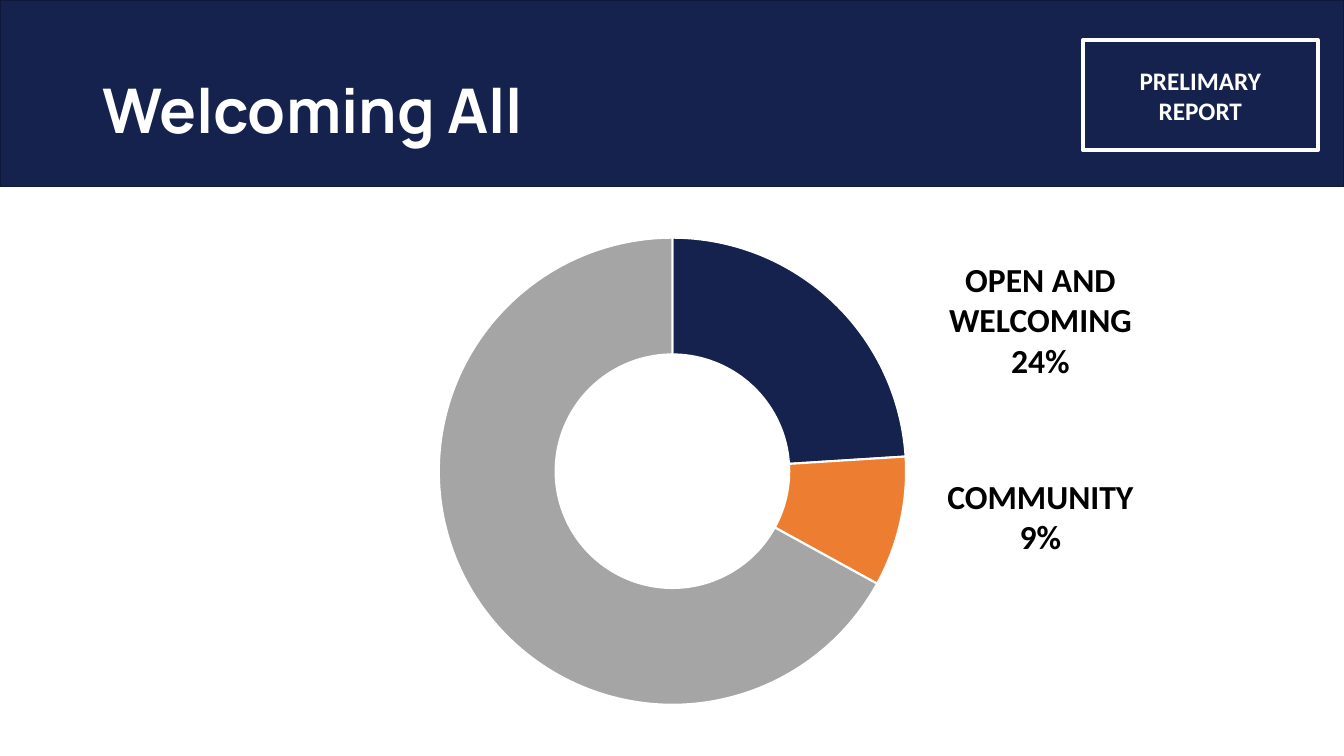
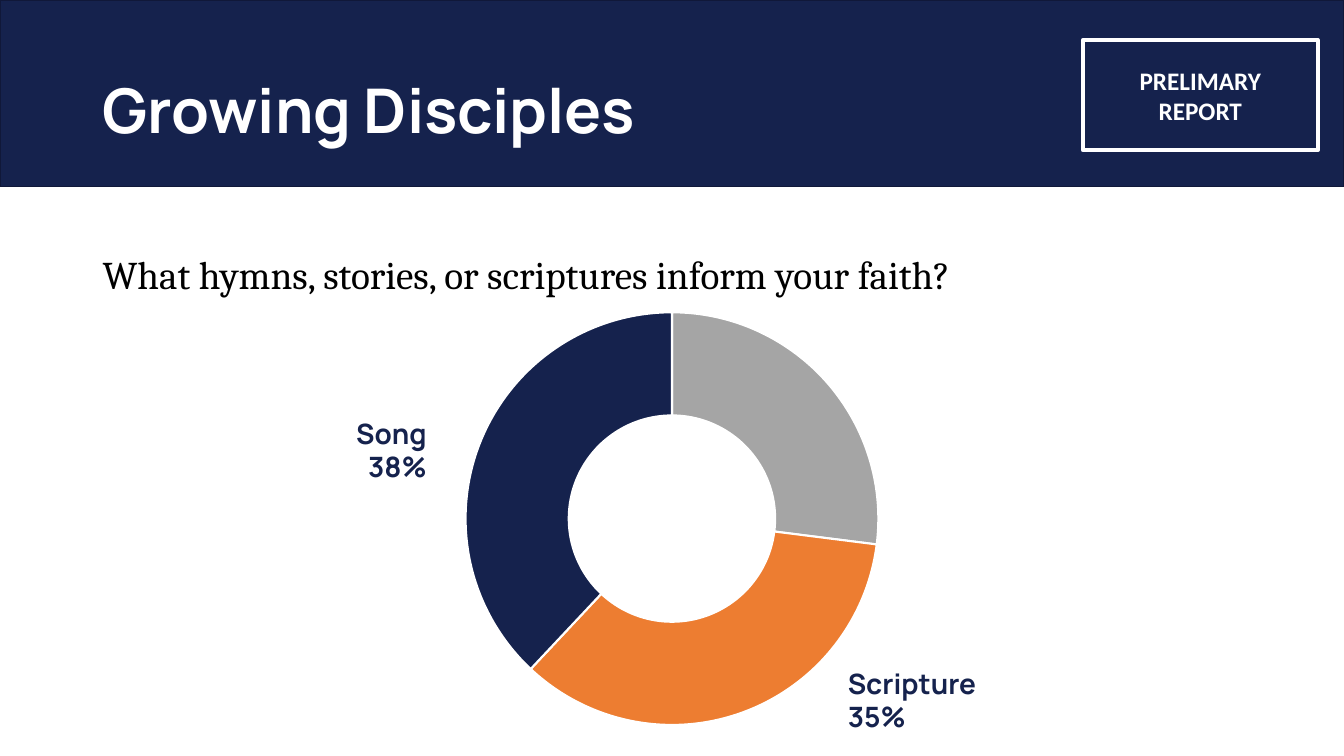
from pptx import Presentation
from pptx.chart.data import CategoryChartData
from pptx.dml.color import RGBColor
from pptx.enum.chart import XL_CHART_TYPE
from pptx.enum.shapes import MSO_SHAPE
from pptx.enum.text import MSO_ANCHOR, PP_ALIGN
from pptx.oxml.ns import qn
from pptx.util import Inches, Pt

RING = XL_CHART_TYPE.DOUGHNUT
RECT = MSO_SHAPE.RECTANGLE
TOP, MIDDLE = MSO_ANCHOR.TOP, MSO_ANCHOR.MIDDLE
LEFT, CENTER, RIGHT = PP_ALIGN.LEFT, PP_ALIGN.CENTER, PP_ALIGN.RIGHT

COLORS = {
    "navy": "15224D",
    "edge": "101839",
    "orange": "ED7D31",
    "gray": "A5A5A5",
    "white": "FFFFFF",
    "black": "000000",
}
BODY, HEAD, SERIF = "Calibri", "Manrope", "Cambria"
MARGIN = 6.9


def tint(name):
    return RGBColor.from_string(COLORS[name])


class Deck:
    """Holds the style and current slide; boxes are percent of the slide."""

    def __init__(self):
        self.prs = Presentation()
        self.prs.slide_width = Inches(13.33)
        self.prs.slide_height = Inches(7.5)
        self.slide = None

    def place(self, box):
        wide, high = self.prs.slide_width, self.prs.slide_height
        return [int(side * share / 100)
                for side, share in zip((wide, high, wide, high), box)]

    def start(self, title):
        """Add a slide with its band, badge and title."""
        self.slide = self.prs.slides.add_slide(self.prs.slide_layouts[6])
        self.rect((0, 0, 100, 24.67), "navy", "edge", 1)
        badge = self.rect((80.57, 5.33, 17.48, 14.53), None, "white", 3)
        self.fill_text(badge.text_frame, ["PRELIMARY", "REPORT"], 18, BODY,
                       "white", CENTER, MIDDLE)
        self.text((MARGIN, 5.33, 73.74, 19.33), [title], 44, HEAD, "white",
                  anchor=MIDDLE, space=0.9)

    def rect(self, box, fill, line, width):
        shape = self.slide.shapes.add_shape(RECT, *self.place(box))
        shape.shadow.inherit = False
        if fill:
            shape.fill.solid()
            shape.fill.fore_color.rgb = tint(fill)
        else:
            shape.fill.background()
        shape.line.color.rgb = tint(line)
        shape.line.width = Pt(width)
        return shape

    def text(self, box, lines, size, font, color, align=LEFT, **style):
        frame = self.slide.shapes.add_textbox(*self.place(box)).text_frame
        self.fill_text(frame, lines, size, font, color, align, **style)

    def fill_text(self, frame, lines, size, font, color, align,
                  anchor=TOP, bold=True, space=1.0):
        frame.word_wrap = True
        frame.vertical_anchor = anchor
        for i, line in enumerate(lines):
            para = frame.add_paragraph() if i else frame.paragraphs[0]
            para.alignment = align
            para.line_spacing = space
            run = para.add_run()
            run.text = line
            run.font.size = Pt(size)
            run.font.name = font
            run.font.bold = bold
            run.font.color.rgb = tint(color)

    def ring(self, box, parts):
        """Draw a doughnut from (value, color) pairs."""
        data = CategoryChartData()
        data.categories = [str(i + 1) for i in range(len(parts))]
        data.add_series("Series 1", [value for value, _ in parts])
        chart = self.slide.shapes.add_chart(RING, *self.place(box), data).chart
        chart.has_title = chart.has_legend = False
        chart.font.name = BODY
        chart.font.size = Pt(10)
        chart.font.color.rgb = tint("black")
        plot = chart.plots[0]
        plot.vary_by_categories = True
        plot._element.find(qn("c:holeSize")).set("val", "75")
        for i, (_, color) in enumerate(parts):
            style = plot.series[0].points[i].format
            style.fill.solid()
            style.fill.fore_color.rgb = tint(color)
            style.line.color.rgb = tint("white")
            style.line.width = Pt(1.5)


def main():
    deck = Deck()

    deck.start("Welcoming All")
    deck.ring((MARGIN, 29.6, 86.27, 65.47),
              [(24, "navy"), (9, "orange"), (67, "gray")])
    for top, high, lines in (
        (33.6, 17.47, ["OPEN AND WELCOMING", "24%"]),
        (62.27, 12.13, ["COMMUNITY", "9%"]),
    ):
        deck.text((67.89, top, 19.05, high), lines, 24, BODY, "black", CENTER)

    deck.start("Growing Disciples")
    deck.ring((25.43, 39.47, 49.14, 58.27),
              [(27, "gray"), (35, "orange"), (38, "navy")])
    for left, top, lines, align in (
        (20.26, 54.4, ["Song", "38%"], RIGHT),
        (62.34, 87.47, ["Scripture", "35%"], LEFT),
    ):
        deck.text((left, top, 12.23, 10.27), lines, 20, HEAD, "navy", align)
    deck.text((MARGIN, 26.27, 70.74, 12.4),
              ["What hymns, stories, or scriptures inform your faith?"],
              28, SERIF, "black", bold=False, space=2.0)

    deck.prs.save("out.pptx")


if __name__ == "__main__":
    main()
